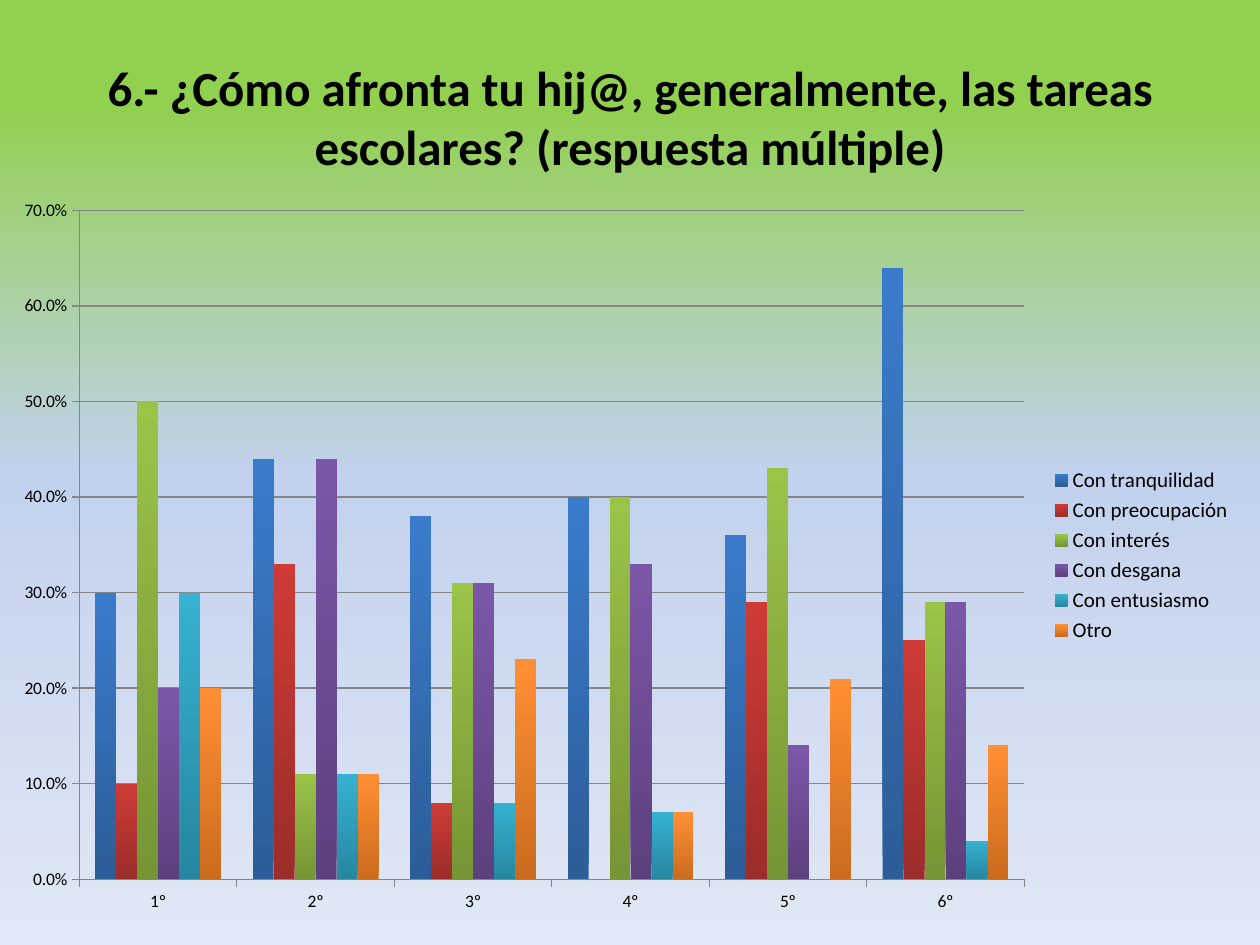
from copy import deepcopy

from lxml.etree import SubElement
from pptx import Presentation
from pptx.chart.data import CategoryChartData
from pptx.dml.color import RGBColor
from pptx.enum.chart import XL_CHART_TYPE, XL_LEGEND_POSITION, XL_TICK_MARK
from pptx.enum.text import MSO_ANCHOR, PP_ALIGN
from pptx.oxml.ns import qn
from pptx.util import Inches, Pt

# Content
TITLE = ("6.- ¿Cómo afronta tu hij@, generalmente, las tareas escolares? "
         "(respuesta múltiple)")
GRADES = ["1º", "2º", "3º", "4º", "5º", "6º"]
ANSWERS = {
    "Con tranquilidad": [0.3, 0.44, 0.38, 0.4, 0.36, 0.64],
    "Con preocupación": [0.1, 0.33, 0.08, 0, 0.29, 0.25],
    "Con interés": [0.5, 0.11, 0.31, 0.4, 0.43, 0.29],
    "Con desgana": [0.2, 0.44, 0.31, 0.33, 0.14, 0.29],
    "Con entusiasmo": [0.3, 0.11, 0.08, 0.07, 0, 0.04],
    "Otro": [0.2, 0.11, 0.23, 0.07, 0.21, 0.14],
}
COLORS = {
    "text": "000000",
    "line": "868686",
    "sky": [(0.11, "92D050"), (0.5, "C2D1ED"), (1, "E1E8F5")],
    # Bar shades, bottom and top
    "Con tranquilidad": ("2C5D98", "3A7CCB"),
    "Con preocupación": ("9B2D2A", "CE3B37"),
    "Con interés": ("769535", "9BC348"),
    "Con desgana": ("5D417E", "7B57A8"),
    "Con entusiasmo": ("2787A0", "36B1D2"),
    "Otro": ("CB6C1D", "FF8F35"),
}
FONT = "Calibri"
# Chart frame, and the plot area inside it, in inches
CHART_LEFT, CHART_TOP, CHART_WIDTH, CHART_HEIGHT = 0, 1.47, 9.88, 5.88
PLOT_LEFT, PLOT_TOP, PLOT_WIDTH, PLOT_HEIGHT = 0.63, 0.2, 7.5, 5.31


def set_font(font, size, bold=False):
    font.name = FONT
    font.size = Pt(size)
    font.bold = bold
    font.color.rgb = RGBColor.from_string(COLORS["text"])


def set_stops(fill, stops, angle):
    fill.gradient_angle = angle
    for stop, (position, color) in zip(fill.gradient_stops, stops):
        stop.position = position
        stop.color.rgb = RGBColor.from_string(color)


def set_plot_layout(chart):
    plot_area = chart._chartSpace.find(".//" + qn("c:plotArea"))
    layout = plot_area.find(qn("c:layout"))
    if layout is None:
        layout = SubElement(plot_area, qn("c:layout"))
        plot_area.insert(0, layout)
    manual = SubElement(layout, qn("c:manualLayout"))
    settings = {
        "layoutTarget": "inner", "xMode": "edge", "yMode": "edge",
        "x": PLOT_LEFT / CHART_WIDTH, "y": PLOT_TOP / CHART_HEIGHT,
        "w": PLOT_WIDTH / CHART_WIDTH, "h": PLOT_HEIGHT / CHART_HEIGHT,
    }
    for name, value in settings.items():
        SubElement(manual, qn("c:" + name)).set("val", str(value))


deck = Presentation()
deck.slide_width, deck.slide_height = Inches(10), Inches(7.5)
page = deck.slides.add_slide(deck.slide_layouts[5])

# Background, with a third gradient stop
background = page.background.fill
background.gradient()
stop_list = page._element.find(".//" + qn("a:gsLst"))
stop_list.append(deepcopy(stop_list[-1]))
set_stops(background, COLORS["sky"], 270)

# Title
title = page.shapes.title
title.left, title.top = Inches(0.5), Inches(0.3)
title.width, title.height = Inches(9), Inches(1.25)
title.text_frame.text = TITLE
title.text_frame.vertical_anchor = MSO_ANCHOR.MIDDLE
heading = title.text_frame.paragraphs[0]
heading.alignment = PP_ALIGN.CENTER
set_font(heading.font, 28, bold=True)

# Chart
data = CategoryChartData(number_format="0.0%")
data.categories = GRADES
for answer, shares in ANSWERS.items():
    data.add_series(answer, shares)
chart = page.shapes.add_chart(
    XL_CHART_TYPE.COLUMN_CLUSTERED, Inches(CHART_LEFT), Inches(CHART_TOP),
    Inches(CHART_WIDTH), Inches(CHART_HEIGHT), data).chart
chart.has_title = False
set_font(chart.font, 10)
set_plot_layout(chart)

# Bars
bars = chart.plots[0]
bars.gap_width, bars.overlap = 150, 0
bars.vary_by_categories = False
for series in bars.series:
    series.invert_if_negative = False
    series.format.fill.gradient()
    bottom, top = COLORS[series.name]
    set_stops(series.format.fill, [(0, bottom), (1, top)], 90)

# Axes and gridlines
shares_axis = chart.value_axis
shares_axis.minimum_scale, shares_axis.maximum_scale = 0, 0.7
shares_axis.major_unit = 0.1
shares_axis.has_major_gridlines = True
shares_axis.tick_labels.number_format = "0.0%"
shares_axis.tick_labels.number_format_is_linked = False
for axis in (chart.category_axis, shares_axis):
    axis.major_tick_mark = XL_TICK_MARK.OUTSIDE
for lined in (chart.category_axis, shares_axis, shares_axis.major_gridlines):
    lined.format.line.width = Pt(0.75)
    lined.format.line.color.rgb = RGBColor.from_string(COLORS["line"])

# Legend
chart.has_legend = True
chart.legend.position = XL_LEGEND_POSITION.RIGHT
chart.legend.include_in_layout = False
set_font(chart.legend.font, 12)

deck.save("out.pptx")
